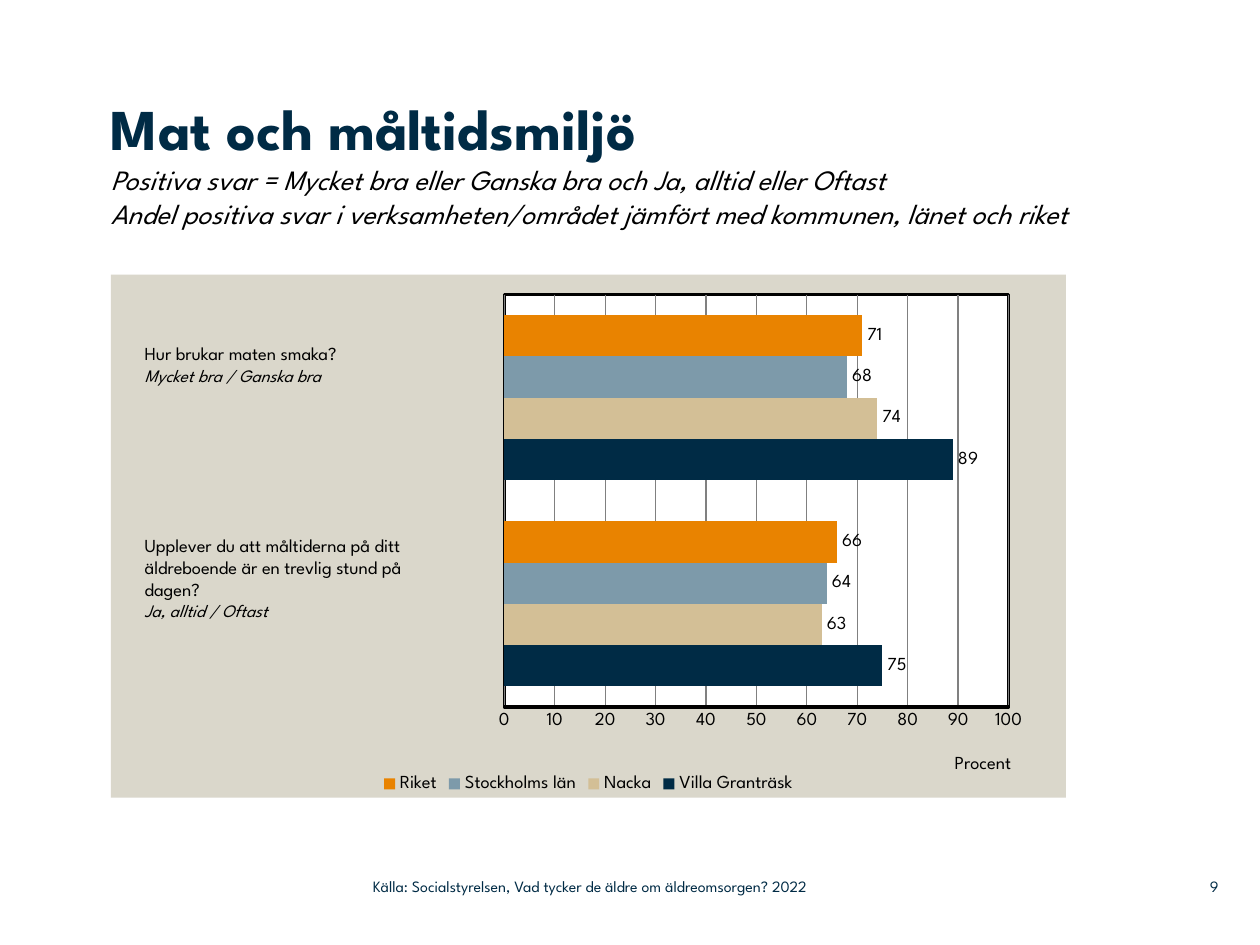
"""Build the slide on meals and the meal setting, with a clustered bar chart."""
from lxml import etree
from pptx import Presentation, util as u
from pptx.chart.data import CategoryChartData
from pptx.dml.color import RGBColor
from pptx.enum import chart as ch, text as t
from pptx.oxml.ns import qn

PX = 9144
FONT = "League Spartan"
HUES = {"navy": "002B45", "black": "000000", "sand": "D3BF96", "blue": "7D9AAA",
        "orange": "E98300", "beige": "DAD7CB", "white": "FFFFFF", "grey": "808080"}

TITLE = [("Mat och måltidsmiljö", 33, "navy", True, False),
         ("Positiva svar = Mycket bra eller Ganska bra och Ja, alltid eller Oftast",
          16, "black", False, True),
         ("Andel positiva svar i verksamheten/området jämfört med kommunen, länet och riket",
          16, "black", False, True)]
CATS = ["1", "2"]
SERIES = [("Villa Granträsk", (75, 89), "navy"),
          ("Nacka", (63, 74), "sand"),
          ("Stockholms län", (64, 68), "blue"),
          ("Riket", (66, 71), "orange")]
ASKS = [((105, 267, 277, 63), ["Hur brukar maten smaka?"], "Mycket bra / Ganska bra"),
        ((105, 419, 277, 98),
         ["Upplever du att måltiderna på ditt äldreboende är en trevlig stund på", "dagen?"],
         "Ja, alltid / Oftast")]
FOOT = [((296, 689, 443, 29), t.PP_ALIGN.LEFT,
         "Källa: Socialstyrelsen, Vad tycker de äldre om äldreomsorgen? 2022"),
        ((920, 689, 47, 29), t.PP_ALIGN.RIGHT, "9")]


def rgb(hue):
    return RGBColor.from_string(HUES[hue])


def style(font, size, hue="black", bold=False, slant=False):
    font.name, font.size = FONT, u.Pt(size)
    font.bold, font.italic = bold, slant
    font.color.rgb = rgb(hue)


def add_box(slide, box, flush=False):
    frame = slide.shapes.add_textbox(*(n * PX for n in box)).text_frame
    frame.word_wrap = True
    if flush:
        frame.margin_left = frame.margin_right = 0
        frame.margin_top = frame.margin_bottom = 0
    return frame


def add_title(slide):
    para = add_box(slide, (88, 74, 842, 144), True).paragraphs[0]
    para.text = "\v".join(row[0] for row in TITLE)
    for run, row in zip(para.runs, TITLE):
        style(run.font, *row[1:])
    for gap, row in zip(para._p.findall(qn("a:br")), TITLE):
        etree.SubElement(gap, qn("a:rPr")).set("sz", str(row[1] * 100))


def add_ask(slide, box, lines, scale):
    frame = add_box(slide, box)
    frame.text = "\n".join(lines + [scale])
    for para in frame.paragraphs:
        style(para.runs[0].font, 10.5)
    style(frame.paragraphs[-1].runs[0].font, 10, slant=True)


def add_foot(slide, box, align, words):
    frame = add_box(slide, box, True)
    frame.vertical_anchor = t.MSO_ANCHOR.MIDDLE
    frame.text = words
    para = frame.paragraphs[0]
    para.alignment = align
    style(para.runs[0].font, 9, "navy")


def place(node, index, **parts):
    for old in node.findall(qn("c:layout")):
        node.remove(old)
    layout = etree.Element(qn("c:layout"))
    manual = etree.SubElement(layout, qn("c:manualLayout"))
    for tag, val in parts.items():
        etree.SubElement(manual, qn("c:" + tag)).set("val", str(val))
    node.insert(index, layout)


def paint(node, index, fill, line=None):
    props = etree.Element(qn("c:spPr"))
    solid = etree.SubElement(props, qn("a:solidFill"))
    etree.SubElement(solid, qn("a:srgbClr")).set("val", HUES[fill])
    edge = etree.SubElement(props, qn("a:ln"))
    if line:
        edge.set("w", str(u.Pt(2)))
        solid = etree.SubElement(edge, qn("a:solidFill"))
        etree.SubElement(solid, qn("a:srgbClr")).set("val", HUES[line])
    else:
        etree.SubElement(edge, qn("a:noFill"))
    node.insert(index, props)


def add_bars(slide):
    data = CategoryChartData()
    data.categories = CATS
    for name, vals, hue in SERIES:
        data.add_series(name, vals)
    box = [n * PX for n in (88, 218, 758, 415)]
    chart = slide.shapes.add_chart(ch.XL_CHART_TYPE.BAR_CLUSTERED, *box, data).chart
    style(chart.font, 10.5)
    chart.has_title = False
    chart.has_legend = True
    chart.legend.position = ch.XL_LEGEND_POSITION.BOTTOM
    chart.legend.include_in_layout = False
    style(chart.legend.font, 10.5)

    plot = chart.plots[0]
    plot.vary_by_categories = False
    plot.gap_width, plot.overlap = 100, 0
    for bars, (name, vals, hue) in zip(plot.series, SERIES):
        bars.format.fill.solid()
        bars.format.fill.fore_color.rgb = rgb(hue)
        tags = bars.data_labels
        tags.show_value = True
        tags.position = ch.XL_LABEL_POSITION.OUTSIDE_END
        style(tags.font, 10.5)

    chart.category_axis.visible = False
    axis = chart.value_axis
    axis.minimum_scale, axis.maximum_scale, axis.major_unit = 0, 100, 10
    axis.major_tick_mark = axis.minor_tick_mark = ch.XL_TICK_MARK.NONE
    axis.format.line.color.rgb = rgb("black")
    axis.format.line.width = u.Pt(2)
    axis.major_gridlines.format.line.color.rgb = rgb("grey")
    axis.major_gridlines.format.line.width = u.Pt(0.75)
    style(axis.tick_labels.font, 10.5)
    title = axis.axis_title
    title.text_frame.text = "Procent"
    style(title.text_frame.paragraphs[0].runs[0].font, 10.5)
    place(title._element, 1, xMode="edge", yMode="edge", x=0.88, y=0.91)

    space = chart._chartSpace
    area = space.chart.plotArea
    place(area, 0, layoutTarget="inner", xMode="edge", yMode="edge",
          x=0.412, y=0.038, w=0.528, h=0.789)
    paint(area, len(area), "white", "black")
    paint(space, space.index(space.chart) + 1, "beige")


def main():
    deck = Presentation()
    deck.slide_width, deck.slide_height = 1000 * PX, 750 * PX
    slide = deck.slides.add_slide(deck.slide_layouts[6])
    add_title(slide)
    add_bars(slide)
    for ask in ASKS:
        add_ask(slide, *ask)
    for foot in FOOT:
        add_foot(slide, *foot)
    deck.save("out.pptx")


if __name__ == "__main__":
    main()
